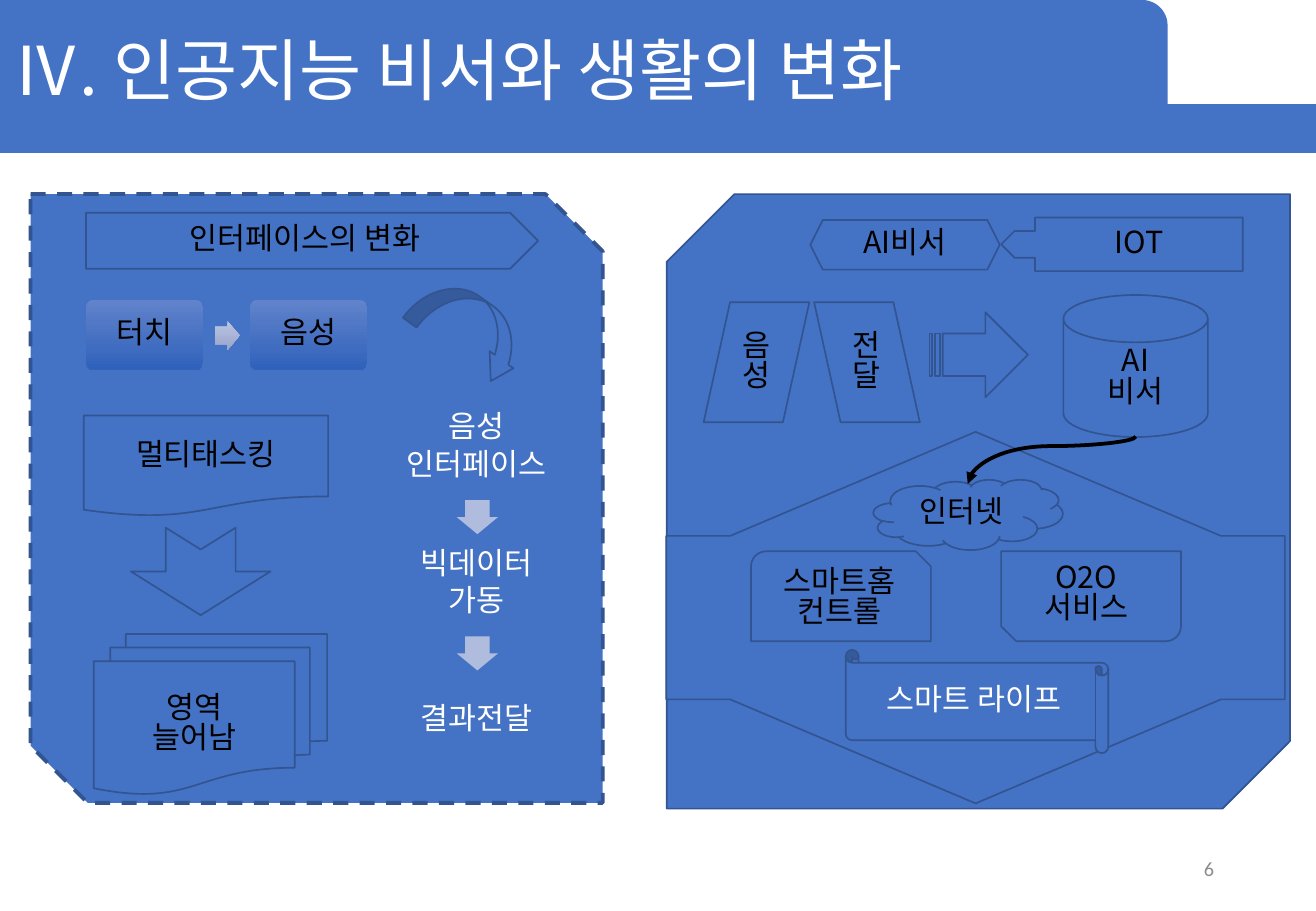
import pptx
import pptx.util
import pptx.dml.color
import pptx.enum.dml
import pptx.enum.shapes
import pptx.enum.text
import pptx.oxml
import pptx.oxml.ns
from dataclasses import dataclass

Cm, Pt = pptx.util.Cm, pptx.util.Pt
KIND = pptx.enum.shapes.MSO_SHAPE
ALIGN = pptx.enum.text.PP_ALIGN
qn = pptx.oxml.ns.qn


@dataclass
class Theme:
    font: str = "Noto Sans CJK KR"
    number_font: str = "Calibri"
    blue: str = "4472C4"
    outline: str = "325491"
    black: str = "000000"
    white: str = "FFFFFF"
    gray: str = "8C8C8C"
    pale: str = "B0BCDE"
    step_gradient: tuple = ("6183CB", "3062BB")
    arrow_gradient: tuple = ("BBC5E3", "98A4CB")
    title: float = 40
    body: float = 18
    number: float = 12
    thin: float = 1
    thick: float = 2.25
    line_spacing: float = 0.83


theme = Theme()

# Content: boxes are left, top, width, height in centimetres
TITLE = "Ⅳ. 인공지능 비서와 생활의 변화"
PAGE_NUMBER = "6"
BANNER = [
    (KIND.RECTANGLE, (0, 2.18, 27.51, 1.02)),
    (KIND.ROUND_1_RECTANGLE, (0, 0, 24.41, 3.2)),
]
LEFT_PANEL = (KIND.SNIP_2_DIAG_RECTANGLE, (0.64, 4.06, 11.96, 12.73), "",
              {"adjust": (0, 0.1), "dashed": True})
INPUT_STEPS = ["터치", "음성"]
VOICE_CHAIN = ["음성\n인터페이스", "빅데이터\n가동", "결과전달"]
LEFT_PARTS = [
    (KIND.PENTAGON, (1.8, 4.45, 9.45, 1.17), "인터페이스의 변화", {}),
    (KIND.CURVED_DOWN_ARROW, (8.56, 6.22, 2.57, 1.3), "",
     {"adjust": (0.27, 0.47, 0.38), "rotation": 35.8}),
    (KIND.FLOWCHART_DOCUMENT, (1.75, 8.69, 5.11, 2.11), "멀티태스킹", {}),
    (KIND.NOTCHED_RIGHT_ARROW, (3.28, 10.49, 1.83, 2.92), "", {"rotation": 90}),
    (KIND.FLOWCHART_MULTIDOCUMENT, (1.96, 13.26, 4.88, 3.35), "영역\n늘어남", {}),
]
RIGHT_PARTS = [
    (KIND.SNIP_2_DIAG_RECTANGLE, (13.94, 4.06, 13.03, 12.85), "",
     {"adjust": (0, 0.11), "flip": "H"}),
    (KIND.LEFT_ARROW_CALLOUT, (20.93, 4.55, 5.05, 1.12), "IOT",
     {"adjust": (0.5, 0.25, 0.25, 0.86)}),
    (KIND.HEXAGON, (16.94, 4.6, 3.96, 1.04), "AI비서", {}),
    (KIND.PARALLELOGRAM, (14.71, 6.32, 2.21, 2.51), "음성", {}),
    (KIND.PARALLELOGRAM, (17.02, 6.32, 2.21, 2.51), "전달", {"flip": "H"}),
    (KIND.STRIPED_RIGHT_ARROW, (19.43, 6.53, 2.06, 1.78), "", {}),
    (KIND.FLOWCHART_MAGNETIC_DISK, (22.23, 6.17, 3.02, 2.97), "AI\n비서", {}),
    (KIND.LEFT_RIGHT_ARROW_CALLOUT, (16.51, 6.45, 7.77, 12.93), "",
     {"adjust": (1.32, 0.66, 0.28, 0.44), "rotation": 270}),
    (KIND.CLOUD, (18.26, 10.03, 3.96, 1.47), "인터넷", {}),
    (KIND.SNIP_ROUND_RECTANGLE, (15.7, 11.53, 3.76, 1.88), "스마트홈\n컨트롤", {}),
    (KIND.SNIP_ROUND_RECTANGLE, (20.93, 11.53, 3.76, 1.88), "", {"flip": "HV"}),
    (KIND.HORIZONTAL_SCROLL, (17.68, 13.59, 5.49, 2.16), "스마트 라이프",
     {"flip": "H", "color": theme.white}),
]
SERVICE_LABEL = ("O2O\n서비스", (21.49, 11.53, 2.44, 1.8))
INTERNET_LINK = (21.49, 7.87, 22.48, 11.38)


def rgb(value):
    return pptx.dml.color.RGBColor.from_string(value)


def write(shape, text, color=theme.black, size=theme.body, font=theme.font,
          align=ALIGN.CENTER, spacing=theme.line_spacing, after=0):
    frame = shape.text_frame
    frame.text = text
    frame.word_wrap = True
    frame.vertical_anchor = pptx.enum.text.MSO_ANCHOR.MIDDLE
    for paragraph in frame.paragraphs:
        paragraph.alignment = align
        paragraph.line_spacing = spacing
        paragraph.space_after = Pt(after)
        for run in paragraph.runs:
            run.font.name, run.font.size = font, Pt(size)
            run.font.color.rgb = rgb(color)
            east_asian = pptx.oxml.parse_xml(
                f'<a:ea {pptx.oxml.ns.nsdecls("a")} typeface="{font}"/>')
            run.font._element.find(qn("a:latin")).addnext(east_asian)


def draw(kind, box, text="", adjust=(), rotation=0, flip="", fill=theme.blue,
         outlined=True, dashed=False, color=theme.black):
    shape = slide.shapes.add_shape(kind, *map(Cm, box))
    shape.shadow.inherit = False
    shape.rotation = rotation
    for index, value in enumerate(adjust):
        shape.adjustments[index] = value
    for axis in flip:
        shape.element.spPr.find(qn("a:xfrm")).set("flip" + axis, "1")
    if isinstance(fill, tuple):
        shape.fill.gradient()
        shape.fill.gradient_angle = 270
        for stop, stop_color in zip(shape.fill.gradient_stops, fill):
            stop.color.rgb = rgb(stop_color)
    else:
        shape.fill.solid()
        shape.fill.fore_color.rgb = rgb(fill)
    if outlined:
        shape.line.color.rgb = rgb(theme.outline)
        shape.line.width = Pt(theme.thick if dashed else theme.thin)
        if dashed:
            shape.line.dash_style = pptx.enum.dml.MSO_LINE.DASH
    else:
        shape.line.fill.background()
    if text:
        write(shape, text, color)
    return shape


def draw_step(box, text, fill, color):
    shape = draw(KIND.ROUNDED_RECTANGLE, box, adjust=(0.1,), fill=fill, outlined=False)
    write(shape, text, color, spacing=0.75, after=6.3)
    frame = shape.text_frame
    frame.margin_left = frame.margin_right = Cm(0.18)
    frame.margin_top = frame.margin_bottom = Cm(0.18)


presentation = pptx.Presentation()
presentation.slide_width, presentation.slide_height = Cm(27.51), Cm(19.05)
slide = presentation.slides.add_slide(presentation.slide_layouts[5])

# Banner, with the title in front of it
for kind, box in BANNER:
    draw(kind, box, outlined=False)
title = slide.shapes.title
title.left, title.top, title.width, title.height = map(Cm, (0, 0, 23.16, 3.1))
write(title, TITLE, theme.white, theme.title, align=ALIGN.LEFT, spacing=0.9)
slide.shapes._spTree.append(title.element)

# Page number
number = slide.shapes.add_textbox(*map(Cm, (19.43, 17.65, 6.2, 1.02)))
write(number, PAGE_NUMBER, theme.gray, theme.number, theme.number_font,
      ALIGN.RIGHT, spacing=1)

# Left panel: touch to voice, then the voice chain
kind, box, text, options = LEFT_PANEL
draw(kind, box, text, **options)
for index, text in enumerate(INPUT_STEPS):
    draw_step((1.8 + 3.43 * index, 6.27, 2.44, 1.47), text,
              theme.step_gradient, theme.black)
draw(KIND.RIGHT_ARROW, (4.5, 6.71, 0.51, 0.61), adjust=(0.6, 0.5),
     fill=theme.arrow_gradient, outlined=False)
for index, text in enumerate(VOICE_CHAIN):
    top = 8.43 + 2.85 * index
    draw_step((8.13, top, 3.68, 1.9), text, theme.blue, theme.white)
    if index < len(VOICE_CHAIN) - 1:
        draw(KIND.DOWN_ARROW, (9.55, top + 2.03, 0.86, 0.71), adjust=(0.6, 0.5),
             fill=theme.pale, outlined=False)

# Remaining parts of both panels
for kind, box, text, options in LEFT_PARTS + RIGHT_PARTS:
    draw(kind, box, text, **options)
text, box = SERVICE_LABEL
write(slide.shapes.add_textbox(*map(Cm, box)), text)

# Curved arrow from the assistant to the internet
link = slide.shapes.add_connector(
    pptx.enum.shapes.MSO_CONNECTOR.CURVE, *map(Cm, INTERNET_LINK))
link.line.color.rgb = rgb(theme.black)
link.line.width = Pt(theme.thick)
properties = link.element.spPr
properties.find(qn("a:xfrm")).set("rot", str(90 * 60000))
guide = properties.find(qn("a:prstGeom")).get_or_add_avLst()._add_gd()
guide.set("name", "adj1")
guide.set("fmla", "val 20200")
link.line._get_or_add_ln().append(pptx.oxml.parse_xml(
    f'<a:tailEnd {pptx.oxml.ns.nsdecls("a")} type="triangle"/>'))
properties.append(pptx.oxml.parse_xml(f'<a:effectLst {pptx.oxml.ns.nsdecls("a")}/>'))

presentation.save("out.pptx")
